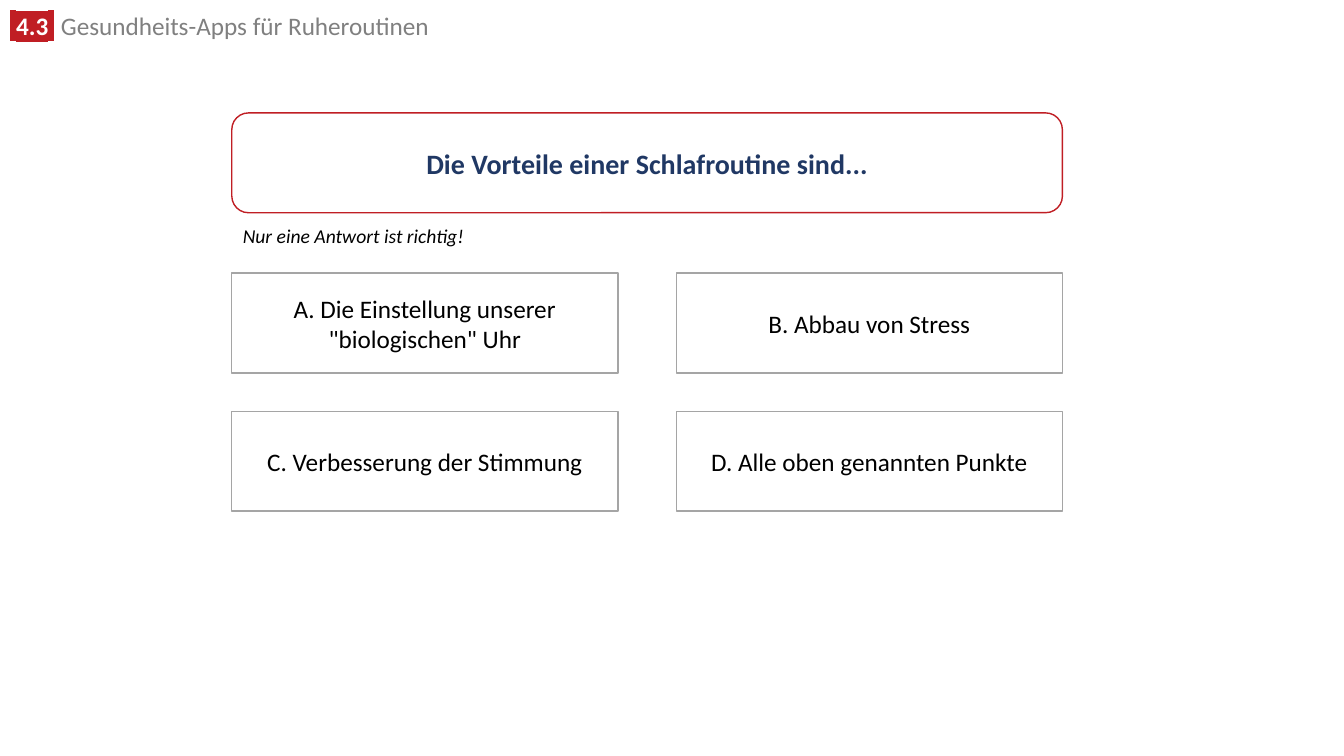
from lxml import etree
from pptx import Presentation, util as u
from pptx.dml.color import RGBColor
from pptx.enum import shapes, text
from pptx.oxml.ns import qn

HEAD = ("4.3", "Gesundheits-Apps für Ruheroutinen")
ASK = "Die Vorteile einer Schlafroutine sind..."
HINT = "Nur eine Antwort ist richtig!"
REPLIES = [
    'A. Die Einstellung unserer "biologischen" Uhr',
    "B. Abbau von Stress",
    "C. Verbesserung der Stimmung",
    "D. Alle oben genannten Punkte",
]

THEME = {
    "font": "Calibri", "alt": "Lato",
    "red": "C01E24", "navy": "203864", "gray": "808080",
    "edge": "A5A5A5", "white": "FFFFFF", "black": "000000",
    "ask": 20, "body": 18, "hint": 14,
}

WIDE, HIGH = 960, 540
LEFT, SPAN, TALL = 165.6, 593.28, 71.28
ASK_TOP, GRID_TOP = 80.64, 195.12
COLS, CELL, STEP = 2, 275.76, 98.64


def rgb(name):
    return RGBColor.from_string(THEME[name])


def write(para, words, size="body", color="black", font="font",
          bold=False, italic=False, mark=None):
    run = para.add_run()
    run.text = words
    face = run.font
    face.size = u.Pt(THEME[size])
    face.name = THEME[font]
    face.bold, face.italic = bold, italic
    face.color.rgb = rgb(color)
    if mark:
        glow = etree.Element(qn("a:highlight"))
        etree.SubElement(glow, qn("a:srgbClr"), val=THEME[mark])
        run._r.rPr.find(qn("a:latin")).addprevious(glow)


def label(page, left, top, wide, high, wrap):
    box = page.shapes.add_textbox(*map(u.Pt, (left, top, wide, high)))
    frame = box.text_frame
    frame.word_wrap = wrap
    frame.auto_size = text.MSO_AUTO_SIZE.SHAPE_TO_FIT_TEXT
    return frame.paragraphs[0]


def panel(page, kind, left, top, wide, edge, words, **style):
    box = page.shapes.add_shape(kind, *map(u.Pt, (left, top, wide, TALL)))
    box.shadow.inherit = False
    box.fill.solid()
    box.fill.fore_color.rgb = rgb("white")
    box.line.color.rgb = rgb(edge)
    box.line.width = u.Pt(1)
    frame = box.text_frame
    frame.word_wrap = True
    frame.vertical_anchor = text.MSO_ANCHOR.MIDDLE
    para = frame.paragraphs[0]
    para.alignment = text.PP_ALIGN.CENTER
    write(para, words, **style)


def main():
    deck = Presentation()
    deck.slide_width, deck.slide_height = u.Pt(WIDE), u.Pt(HIGH)
    page = deck.slides.add_slide(deck.slide_layouts[6])

    head = label(page, 0, 7.92, 685.44, 25.2, True)
    head.line_spacing = 0.8
    badge = {"color": "white", "bold": True, "mark": "red"}
    number, title = HEAD
    write(head, " ", font="alt", **badge)
    write(head, number, **badge)
    write(head, " ", font="alt", **badge)
    write(head, " ", font="alt", color="gray")
    write(head, title, color="gray")

    kinds = shapes.MSO_SHAPE
    panel(page, kinds.ROUNDED_RECTANGLE, LEFT, ASK_TOP, SPAN, "red", ASK,
          size="ask", color="navy", bold=True)
    for i, reply in enumerate(REPLIES):
        row, col = divmod(i, COLS)
        panel(page, kinds.RECTANGLE, LEFT + col * (SPAN - CELL),
              GRID_TOP + row * STEP, CELL, "edge", reply)

    hint = label(page, 166.32, 156.24, 174.24, 24.48, False)
    write(hint, HINT, size="hint", italic=True)

    deck.save("out.pptx")


if __name__ == "__main__":
    main()
